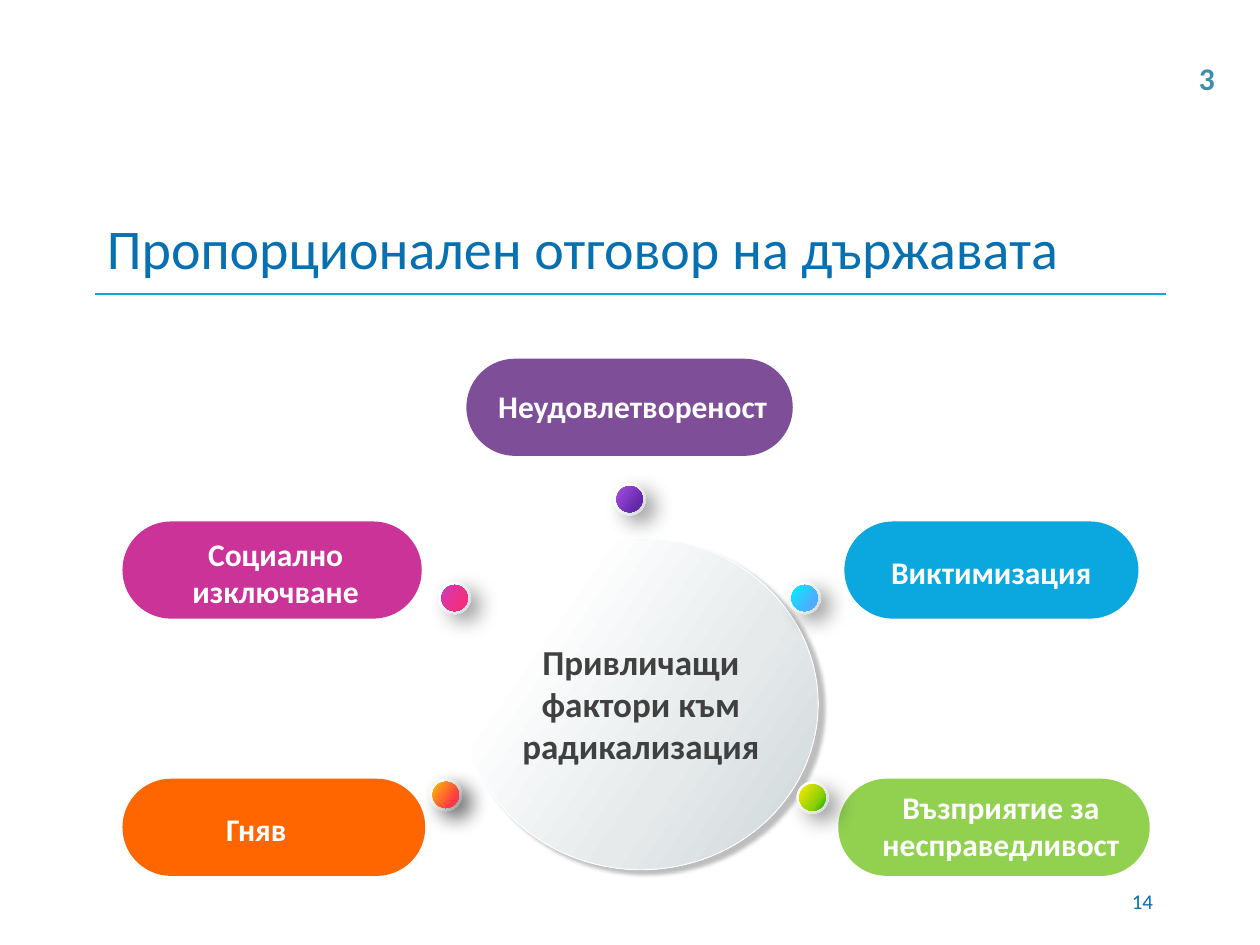
import pptx
import pptx.util
from dataclasses import dataclass
from lxml import etree
from pptx.dml.color import RGBColor
from pptx.enum.shapes import MSO_CONNECTOR, MSO_SHAPE
from pptx.enum.text import MSO_ANCHOR, PP_ALIGN
from pptx.oxml.ns import qn

Pt = pptx.util.Pt


@dataclass(frozen=True)
class Theme:
    font: str = "Calibri"
    blue: str = "0770B1"
    rule: str = "0BA7DF"
    teal: str = "3E8EA9"
    dark: str = "404040"
    white: str = "FFFFFF"
    silver: tuple = ((23, "FFFFFF"), (63, "E6EAEB"), (100, "CDD5D8"))
    disc_shadow: tuple = (26, 2, 3.7)
    dot_shadow: tuple = (38, 12, 7.1)
    title: int = 32
    hub: int = 20
    label: int = 18
    page: int = 12


T = Theme()
ANGLE, SHADOW_ANGLE = 35, 39
PILL_H, DOT, DOT_CORE = 55.5, 18.5, 15


@dataclass
class Factor:
    text: str
    color: str
    pill: tuple   # left, top, width
    label: tuple  # left, top, width, height
    dot: tuple    # left, top
    core: tuple   # gradient stops
    core_shadow: tuple = None


FACTORS = [
    Factor("Гняв", "FF6600", (70, 445, 173), (89, 460, 115, 27.5), (245.5, 445),
           ((0, "FFC203"), (37, "FF7D25"), (77, "FF3847")), T.dot_shadow),
    Factor("Социално изключване", "CC3399", (70, 298, 171), (78, 302.5, 159, 49),
           (250.5, 332.5), ((1, "C23FC6"), (36, "E1359B"), (98, "FF2A70"))),
    Factor("Неудовлетвореност", "7E4E99", (266.5, 205, 186.5), (279, 218, 165, 27.5),
           (350.5, 276), ((0, "A852E6"), (37, "863DC8"), (77, "6428AA"))),
    Factor("Виктимизация", "0BA7DF", (482.5, 298, 168), (504, 313, 125, 27.5),
           (450.5, 332.5), ((0, "00F2FE"), (37, "28CFFE"), (77, "4FACFE"))),
    Factor("Възприятие за несправедливост", "92D050", (479, 445, 178),
           (487.5, 447, 169, 49), (455, 446.5),
           ((0, "FFEA03"), (71, "85CE02"), (98, "0CB100"))),
]


def add_text(tf, text, size, color, bold=False, align=PP_ALIGN.LEFT,
             anchor=MSO_ANCHOR.TOP, inset=(7.2, 3.6), wrap=True):
    tf.word_wrap = wrap
    tf.vertical_anchor = anchor
    tf.margin_left = tf.margin_right = Pt(inset[0])
    tf.margin_top = tf.margin_bottom = Pt(inset[1])
    p = tf.paragraphs[0]
    p.alignment = align
    r = p.add_run()
    r.text = text
    r.font.name, r.font.size, r.font.bold = T.font, Pt(size), bold
    r.font.color.rgb = RGBColor.from_string(color)


def add_box(s, box, text, **fmt):
    tb = s.shapes.add_textbox(*map(Pt, box))
    add_text(tb.text_frame, text, **fmt)


def add_color(parent, color):
    return etree.SubElement(parent, qn("a:srgbClr"), val=color)


def set_gradient(sp, stops):
    sp.fill.gradient()
    sp.fill.gradient_angle = 360 - ANGLE
    gs_list = sp.element.spPr.find(".//" + qn("a:gsLst"))
    for gs in list(gs_list):
        gs_list.remove(gs)
    for pos, color in stops:
        add_color(etree.SubElement(gs_list, qn("a:gs"), pos=str(pos * 1000)), color)


def set_shadow(sp, alpha, blur, dist):
    shadow = etree.SubElement(
        sp.element.spPr.find(qn("a:effectLst")), qn("a:outerShdw"),
        blurRad=str(Pt(blur)), dist=str(Pt(dist)), dir=str(SHADOW_ANGLE * 60000),
        algn="tl", rotWithShape="0")
    etree.SubElement(add_color(shadow, "000000"), qn("a:alpha"), val=str(alpha * 1000))


def add_shape(s, kind, box, fill, shadow=None):
    """Fill is one colour or a tuple of gradient stops."""
    sp = s.shapes.add_shape(kind, *map(Pt, box))
    sp.shadow.inherit = False
    sp.line.fill.background()
    if isinstance(fill, str):
        sp.fill.solid()
        sp.fill.fore_color.rgb = RGBColor.from_string(fill)
    else:
        set_gradient(sp, fill)
    if shadow:
        set_shadow(sp, *shadow)
    return sp


def add_heading(s, box, text):
    left, top, width, height = box
    bottom = top + height
    line = s.shapes.add_connector(MSO_CONNECTOR.STRAIGHT, Pt(left), Pt(bottom),
                                  Pt(left + width), Pt(bottom))
    line.line.color.rgb = RGBColor.from_string(T.rule)
    line.line.width = Pt(0.75)
    etree.SubElement(line.element.spPr, qn("a:effectLst"))
    add_box(s, box, text, size=T.title, color=T.blue, anchor=MSO_ANCHOR.MIDDLE)


def add_hub(s, box, text):
    sp = add_shape(s, MSO_SHAPE.OVAL, box, T.silver, T.disc_shadow)
    sp.line.color.rgb = RGBColor.from_string(T.white)
    sp.line.width = Pt(0.5)
    add_text(sp.text_frame, text, size=T.hub, color=T.dark, bold=True,
             align=PP_ALIGN.CENTER, anchor=MSO_ANCHOR.MIDDLE, inset=(3, 3.6))


def add_dot(s, left, top, core, core_shadow):
    gap = (DOT - DOT_CORE) / 2
    add_shape(s, MSO_SHAPE.OVAL, (left, top, DOT, DOT), T.silver, T.dot_shadow)
    add_shape(s, MSO_SHAPE.OVAL, (left + gap, top + gap, DOT_CORE, DOT_CORE),
              core, core_shadow)


def add_factor(s, factor):
    pill = add_shape(s, MSO_SHAPE.ROUNDED_RECTANGLE, (*factor.pill, PILL_H), factor.color)
    pill.adjustments[0] = 0.5
    add_dot(s, *factor.dot, factor.core, factor.core_shadow)
    add_box(s, factor.label, factor.text, size=T.label, color=T.white, bold=True,
            align=PP_ALIGN.CENTER, inset=(3, 3))


def main():
    prs = pptx.Presentation()
    prs.slide_width, prs.slide_height = Pt(720), Pt(540)
    s = prs.slides.add_slide(prs.slide_layouts[6])
    add_heading(s, (54, 114, 612, 54), "Пропорционален отговор на държавата")
    add_hub(s, (265, 307.5, 202.5, 189.5), "Привличащи фактори към радикализация")
    for factor in FACTORS:
        add_factor(s, factor)
    add_box(s, (678, 30, 24, 29), "3", size=T.label, color=T.teal, bold=True, wrap=False)
    add_box(s, (516, 500.5, 150, 29), "14", size=T.page, color=T.blue,
            align=PP_ALIGN.RIGHT, anchor=MSO_ANCHOR.MIDDLE)
    prs.save("out.pptx")


if __name__ == "__main__":
    main()
